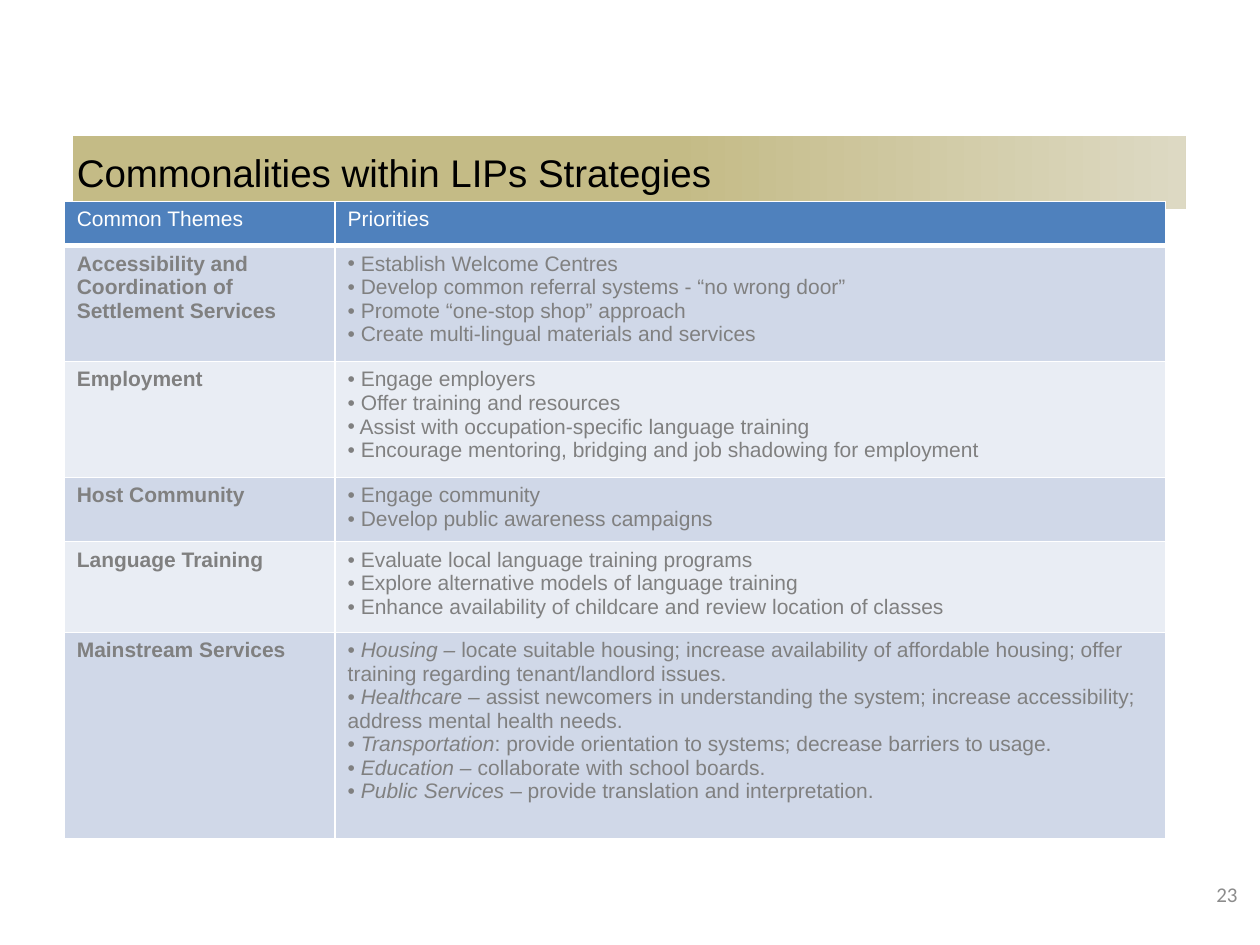
from lxml.etree import SubElement as Sub
from pptx import Presentation
from pptx.dml.color import RGBColor
from pptx.enum.shapes import MSO_SHAPE as Shape
from pptx.enum.text import MSO_ANCHOR as Anchor, PP_ALIGN as Align
from pptx.oxml.ns import qn
from pptx.util import Inches, Pt

# Content: theme, then its priorities as (italic lead, plain text)
TITLE = "Commonalities within LIPs Strategies"
NUMBER = "23"
HEADS = ["Common Themes", "Priorities"]
THEMES = [
    ("Accessibility and Coordination of Settlement Services", [
        ("", "Establish Welcome Centres"),
        ("", "Develop common referral systems - “no wrong door”"),
        ("", "Promote “one-stop shop” approach"),
        ("", "Create multi-lingual materials and services")]),
    ("Employment", [
        ("", "Engage employers"),
        ("", "Offer training and resources"),
        ("", "Assist with occupation-specific language training"),
        ("", "Encourage mentoring, bridging and job shadowing for employment")]),
    ("Host Community", [
        ("", "Engage community"),
        ("", "Develop public awareness campaigns")]),
    ("Language Training", [
        ("", "Evaluate local language training programs"),
        ("", "Explore alternative models of language training"),
        ("", "Enhance availability of childcare and review location of classes")]),
    ("Mainstream Services", [
        ("Housing – ", "locate suitable housing; increase availability of "
         "affordable housing; offer training regarding tenant/landlord issues."),
        ("Healthcare – ", "assist newcomers in understanding the system; "
         "increase accessibility; address mental health needs."),
        ("Transportation", ": provide orientation to systems; "
         "decrease barriers to usage."),
        ("Education – ", "collaborate with school boards."),
        ("Public Services ", "– provide translation and interpretation.")]),
]
COLS = [2.15, 6.59]
ROWS = [0.35, 0.92, 0.92, 0.51, 0.72, 1.64]
BLUE, WHITE, GREY = "4F81BD", "FFFFFF", "808080"
BANDS = ["D0D8E8", "E9EDF4"]


def rgb(code):
    return RGBColor.from_string(code)


def box(left, top, width, height):
    return [Inches(n) for n in (left, top, width, height)]


def add_run(para, text, color, size=12, face="Arial", bold=False, italic=False):
    run = para.add_run()
    run.text = text
    font = run.font
    font.name, font.size = face, Pt(size)
    font.bold, font.italic = bold, italic
    font.color.rgb = rgb(color)


def add_bullet(para):
    props = para._p.get_or_add_pPr()
    props.set("marL", "0")
    props.set("indent", "0")
    Sub(props, qn("a:buFont"), typeface="Arial")
    Sub(props, qn("a:buChar"), char="•")


def style(cell, fill, base=1):
    props = cell._tc.get_or_add_tcPr()
    for side, width in zip("LRTB", (1, 1, 1, base)):
        line = Sub(props, qn(f"a:ln{side}"), w=str(Pt(width)))
        Sub(Sub(line, qn("a:solidFill")), qn("a:srgbClr"), val=WHITE)
    cell.fill.solid()
    cell.fill.fore_color.rgb = rgb(fill)


deck = Presentation()
deck.slide_width, deck.slide_height = Inches(10), Inches(7.5)
slide = deck.slides.add_slide(deck.slide_layouts[5])
shapes = slide.shapes

# Title
title = shapes.title
title.left, title.top, title.width, title.height = box(0.51, 0.91, 9, 0.91)
frame = title.text_frame
frame.vertical_anchor = Anchor.MIDDLE
frame.paragraphs[0].alignment = Align.LEFT
add_run(frame.paragraphs[0], TITLE, "000000", 22)

# Gradient band behind the title
band = shapes.add_shape(Shape.RECTANGLE, *box(0.58, 1.08, 8.83, 0.58))
band.shadow.inherit = False
band.line.fill.background()
band.fill.gradient()
band.fill.gradient_angle = 0
stops = [(0.54, "C4BB86"), (1, "DDD9C3")]
for stop, (place, color) in zip(band.fill.gradient_stops, stops):
    stop.position = place
    stop.color.rgb = rgb(color)
title.element.addprevious(band.element)

# Slide number
num = shapes.add_textbox(*box(9, 6.95, 0.92, 0.4)).text_frame
num.word_wrap = True
num.paragraphs[0].alignment = Align.RIGHT
add_run(num.paragraphs[0], NUMBER, "8C8C8C", 12, "Calibri")

# Table
table = shapes.add_table(len(ROWS), len(COLS),
                         *box(0.51, 1.6, sum(COLS), sum(ROWS))).table
for col, width in zip(table.columns, COLS):
    col.width = Inches(width)
for row, height in zip(table.rows, ROWS):
    row.height = Inches(height)

for cell, head in zip(table.rows[0].cells, HEADS):
    style(cell, BLUE, 3)
    add_run(cell.text_frame.paragraphs[0], head, WHITE)

for i, (theme, items) in enumerate(THEMES):
    left, right = table.rows[i + 1].cells
    for cell in (left, right):
        style(cell, BANDS[i % 2])
    add_run(left.text_frame.paragraphs[0], theme, GREY, bold=True)
    frame = right.text_frame
    for j, (lead, text) in enumerate(items):
        para = frame.add_paragraph() if j else frame.paragraphs[0]
        add_bullet(para)
        if lead:
            add_run(para, " ", GREY)
            add_run(para, lead, GREY, italic=True)
            add_run(para, text, GREY)
        else:
            add_run(para, " " + text, GREY)

deck.save("out.pptx")
